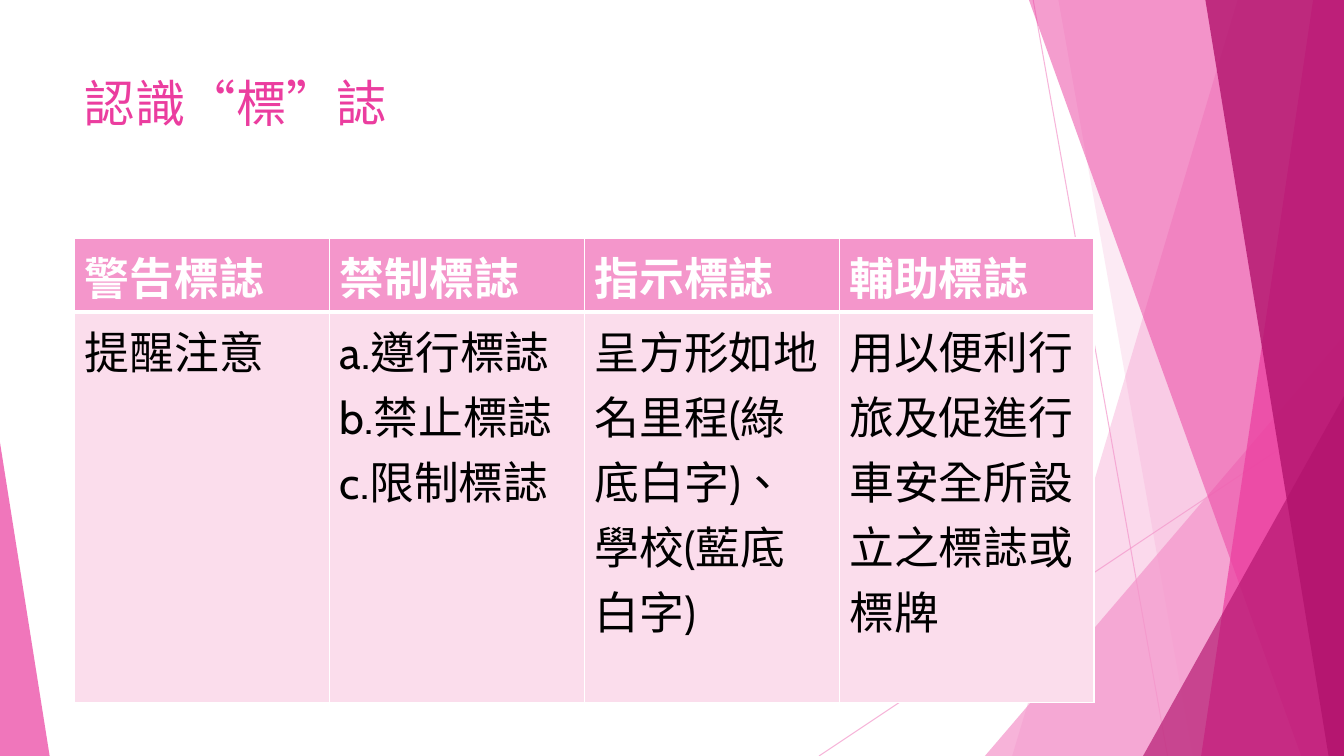
import pptx
import pptx.dml.color
import pptx.enum.lang
import pptx.enum.shapes
import pptx.enum.text
import pptx.oxml
import pptx.oxml.ns
import pptx.util
from lxml import etree

Pt = pptx.util.Pt
qn = pptx.oxml.ns.qn

WIDTH, HEIGHT = 960, 540
FONT = "Cabin"
COLORS = {
    "light": "F496CB",
    "pink": "EB3D9F",
    "dark": "B2136D",
    "pale": "FBDDEC",
    "white": "FFFFFF",
    "black": "000000",
}

# Bands against the right edge: left x at the top, left x at the bottom, colour, opacity
BANDS_BEHIND = [(884, 723, "light", 36), (756, 852, "light", 20)]
BANDS_FRONT = [
    (735, 929.5, "pink", 50),
    (938, 858, "pink", 70),
    (861, 949, "dark", 80),
]

SIGNS = [
    ["警告標誌", "禁制標誌", "指示標誌", "輔助標誌"],
    [
        "提醒注意",
        "a.遵行標誌\nb.禁止標誌\nc.限制標誌",
        "呈方形如地名里程(綠底白字)、學校(藍底白字)",
        "用以便利行旅及促進行車安全所設立之標誌或標牌",
    ],
]


class SlideBuilder:
    def __init__(self, slide):
        self.slide = slide
        self.shapes = slide.shapes

    def color(self, name):
        return pptx.dml.color.RGBColor.from_string(COLORS[name])

    def set_opacity(self, fill_parent, percent):
        color = fill_parent.find(qn("a:solidFill"))[0]
        etree.SubElement(color, qn("a:alpha"), val=str(percent * 1000))

    def paint(self, shape, color, opacity):
        shape.shadow.inherit = False
        shape.fill.solid()
        shape.fill.fore_color.rgb = self.color(color)
        shape.line.fill.background()
        self.set_opacity(shape._element.spPr, opacity)

    def line(self, x1, y1, x2, y2):
        connector = self.shapes.add_connector(
            pptx.enum.shapes.MSO_CONNECTOR.STRAIGHT, Pt(x1), Pt(y1), Pt(x2), Pt(y2))
        connector.line.color.rgb = self.color("light")
        connector.line.width = Pt(0.75)
        properties = connector._element.spPr
        self.set_opacity(properties.find(qn("a:ln")), 70)
        etree.SubElement(properties, qn("a:effectLst"))

    def band(self, top_x, bottom_x, color, opacity):
        """Fill from a slanted edge to the right side of the slide."""
        builder = self.shapes.build_freeform(Pt(top_x), 0)
        corners = [(WIDTH, 0), (WIDTH, HEIGHT), (bottom_x, HEIGHT)]
        builder.add_line_segments([(Pt(x), Pt(y)) for x, y in corners])
        self.paint(builder.convert_to_shape(), color, opacity)

    def triangle(self, left, top, width, apex, color, opacity):
        """Stand a triangle on the bottom of the slide."""
        shape = self.shapes.add_shape(
            pptx.enum.shapes.MSO_SHAPE.ISOSCELES_TRIANGLE,
            Pt(left), Pt(top), Pt(width), Pt(HEIGHT - top))
        shape.adjustments[0] = apex
        self.paint(shape, color, opacity)

    def set_text(self, text_frame, text, size, color, bold=False):
        text_frame.text = text
        text_frame.word_wrap = True
        for paragraph in text_frame.paragraphs:
            for run in paragraph.runs:
                font = run.font
                font.name = FONT
                font.size = Pt(size)
                font.bold = bold
                font.color.rgb = self.color(color)
                font.language_id = pptx.enum.lang.MSO_LANGUAGE_ID.TRADITIONAL_CHINESE

    def title(self, text, left, top, width, height):
        box = self.shapes.add_textbox(Pt(left), Pt(top), Pt(width), Pt(height))
        box.text_frame.vertical_anchor = pptx.enum.text.MSO_ANCHOR.TOP
        self.set_text(box.text_frame, text, 36, "pink")

    def border(self, cell, side, width):
        line = etree.SubElement(
            cell._tc.get_or_add_tcPr(), qn("a:ln" + side), w=str(Pt(width)))
        fill = etree.SubElement(line, qn("a:solidFill"))
        etree.SubElement(fill, qn("a:srgbClr"), val=COLORS["white"])

    def table(self, rows, left, top, column_width, row_heights):
        frame = self.shapes.add_table(
            len(rows), len(rows[0]), Pt(left), Pt(top),
            Pt(column_width * len(rows[0])), Pt(sum(row_heights)))
        table = frame.table
        for column in table.columns:
            column.width = Pt(column_width)
        for row_index, texts in enumerate(rows):
            table.rows[row_index].height = Pt(row_heights[row_index])
            header = row_index == 0
            for column_index, text in enumerate(texts):
                cell = table.cell(row_index, column_index)
                for side in "LRTB":
                    between_rows = side == ("B" if header else "T")
                    self.border(cell, side, 3 if between_rows else 1)
                cell.fill.solid()
                cell.fill.fore_color.rgb = self.color("light" if header else "pale")
                self.set_text(cell.text_frame, text, 32,
                              "white" if header else "black", header)


def main():
    presentation = pptx.Presentation()
    presentation.slide_width = Pt(WIDTH)
    presentation.slide_height = Pt(HEIGHT)
    builder = SlideBuilder(presentation.slides.add_slide(presentation.slide_layouts[6]))

    builder.line(738, 0, 834, HEIGHT)
    builder.line(WIDTH, 290, 585, HEIGHT)
    for band in BANDS_BEHIND:
        builder.band(*band)
    builder.triangle(703.5, 240, 256.5, 1, "light", 72)
    for band in BANDS_FRONT:
        builder.band(*band)
    builder.triangle(816.5, 283, 143.5, 1, "dark", 66)
    builder.triangle(0, 316, 35.5, 0, "pink", 70)

    builder.title("認識“標”誌", 53.5, 48, 677, 104)
    builder.table(SIGNS, 53.5, 170, 182, [53, 279])
    presentation.save("out.pptx")


if __name__ == "__main__":
    main()
